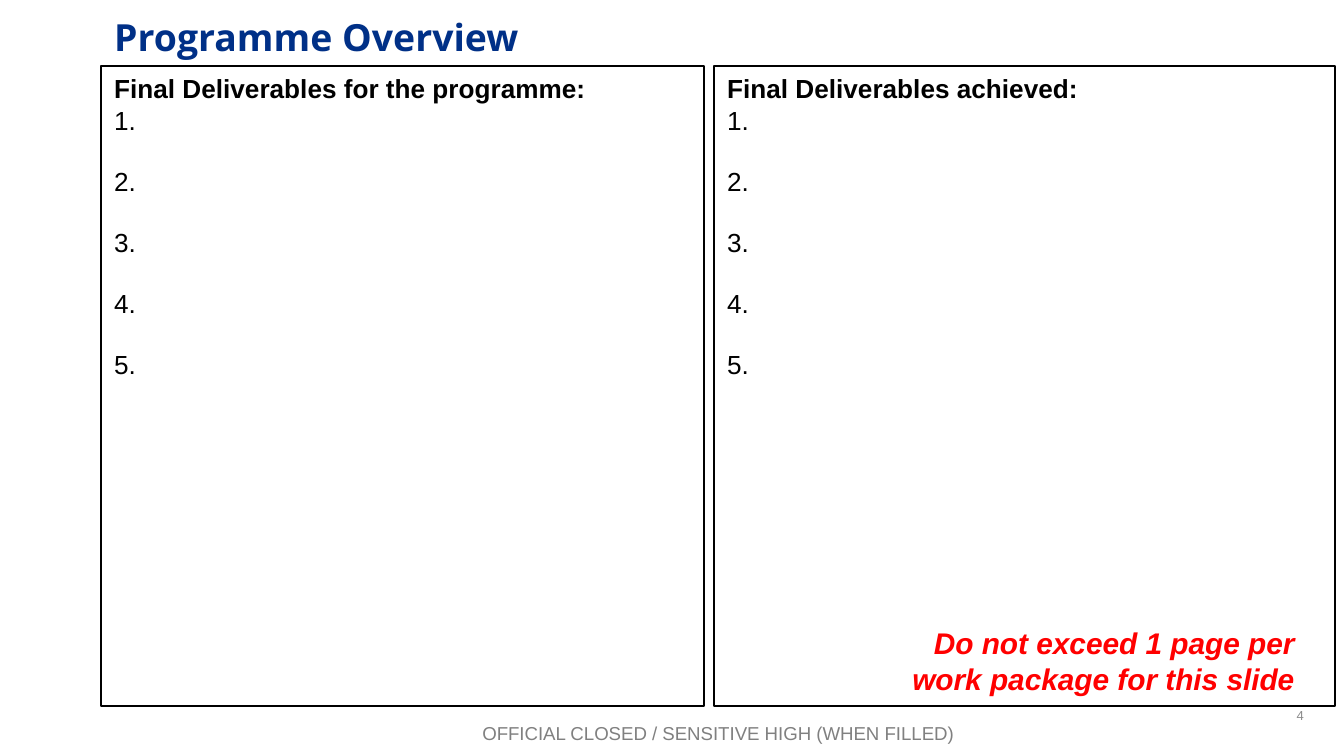
from dataclasses import dataclass

from pptx import Presentation
from pptx.dml.color import RGBColor
from pptx.enum.shapes import MSO_SHAPE
from pptx.enum.text import MSO_ANCHOR, PP_ALIGN
from pptx.util import Emu, Pt

RECT = MSO_SHAPE.RECTANGLE
TOP, MIDDLE = MSO_ANCHOR.TOP, MSO_ANCHOR.MIDDLE
LEFT, CENTER, RIGHT = PP_ALIGN.LEFT, PP_ALIGN.CENTER, PP_ALIGN.RIGHT
BLANK = 6
SCALE = 914400 / 134.4


@dataclass(frozen=True)
class Theme:
    sans: str = "Arial"
    head: str = "Open Sans"
    navy: str = "003087"
    black: str = "000000"
    red: str = "FF0000"
    gray: str = "808080"
    pale: str = "8C8C8C"
    title: int = 20
    note: int = 16
    body: int = 14
    foot: int = 10
    page: int = 7
    gap: int = 16
    edge: float = 0.75


THEME = Theme()


def px(*vals):
    return [Emu(round(v * SCALE)) for v in vals]


def style(para, color, size, align=LEFT, **form):
    para.alignment = align
    font = para.font
    font.color.rgb = RGBColor.from_string(color)
    for key, val in {"name": THEME.sans, "size": Pt(size), **form}.items():
        setattr(font, key, val)


def label(slide, box, text, color, size, align=LEFT, anchor=TOP, **form):
    frame = slide.shapes.add_textbox(*px(*box)).text_frame
    frame.word_wrap = True
    frame.vertical_anchor = anchor
    para = frame.paragraphs[0]
    para.text = text
    style(para, color, size, align, **form)


def panel(slide, box, head, count):
    """Draw a framed box with a bold heading and a numbered blank list."""
    shape = slide.shapes.add_shape(RECT, *px(*box))
    shape.shadow.inherit = False
    shape.fill.background()
    shape.line.color.rgb = RGBColor.from_string(THEME.black)
    shape.line.width = Pt(THEME.edge)
    frame = shape.text_frame
    frame.word_wrap = True
    frame.vertical_anchor = TOP
    para = frame.paragraphs[0]
    para.text = head
    style(para, THEME.black, THEME.body, bold=True)
    for num in range(1, count + 1):
        para = frame.add_paragraph()
        para.text = f"{num}."
        style(para, THEME.black, THEME.body, bold=False)
        if num > 1:
            para.space_before = Pt(THEME.gap)


def main():
    deck = Presentation()
    deck.slide_width, deck.slide_height = px(1344, 756)
    slide = deck.slides.add_slide(deck.slide_layouts[BLANK])

    label(slide, (1004, 695, 313, 40), "4", THEME.pale, THEME.page,
          RIGHT, MIDDLE)
    label(slide, (91, 715, 1254, 36),
          "OFFICIAL CLOSED / SENSITIVE HIGH (WHEN FILLED)",
          THEME.gray, THEME.foot, CENTER)
    label(slide, (101, 8, 1164, 106), "Programme Overview",
          THEME.navy, THEME.title, name=THEME.head, bold=True)

    heads = (
        (101, 603, "Final Deliverables for the programme:"),
        (714, 621, "Final Deliverables achieved:"),
    )
    for left, width, head in heads:
        panel(slide, (left, 66, width, 640), head, 5)

    label(slide, (851, 618, 457, 86),
          "Do not exceed 1 page per work package for this slide",
          THEME.red, THEME.note, RIGHT, bold=True, italic=True)

    deck.save("out.pptx")


if __name__ == "__main__":
    main()
